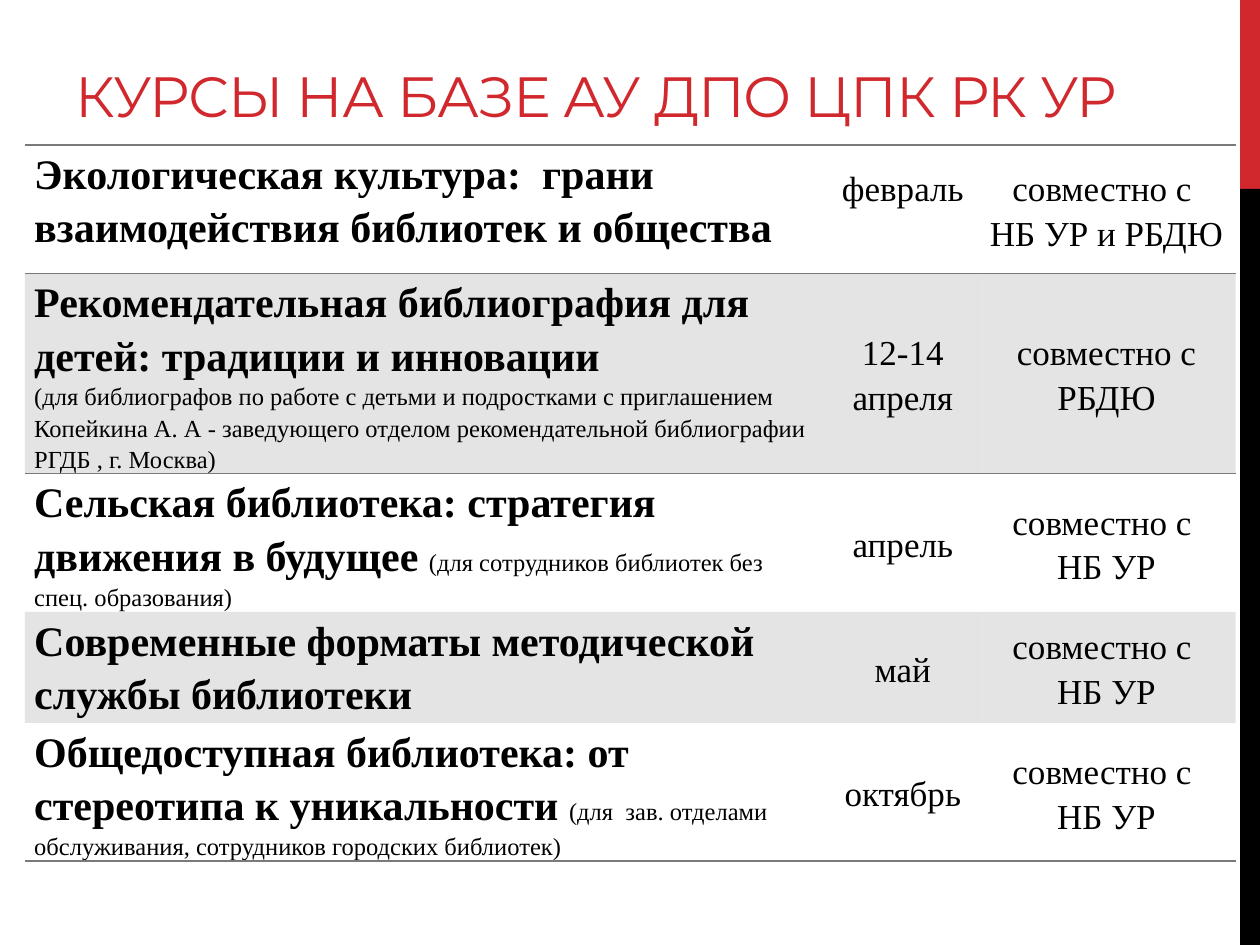
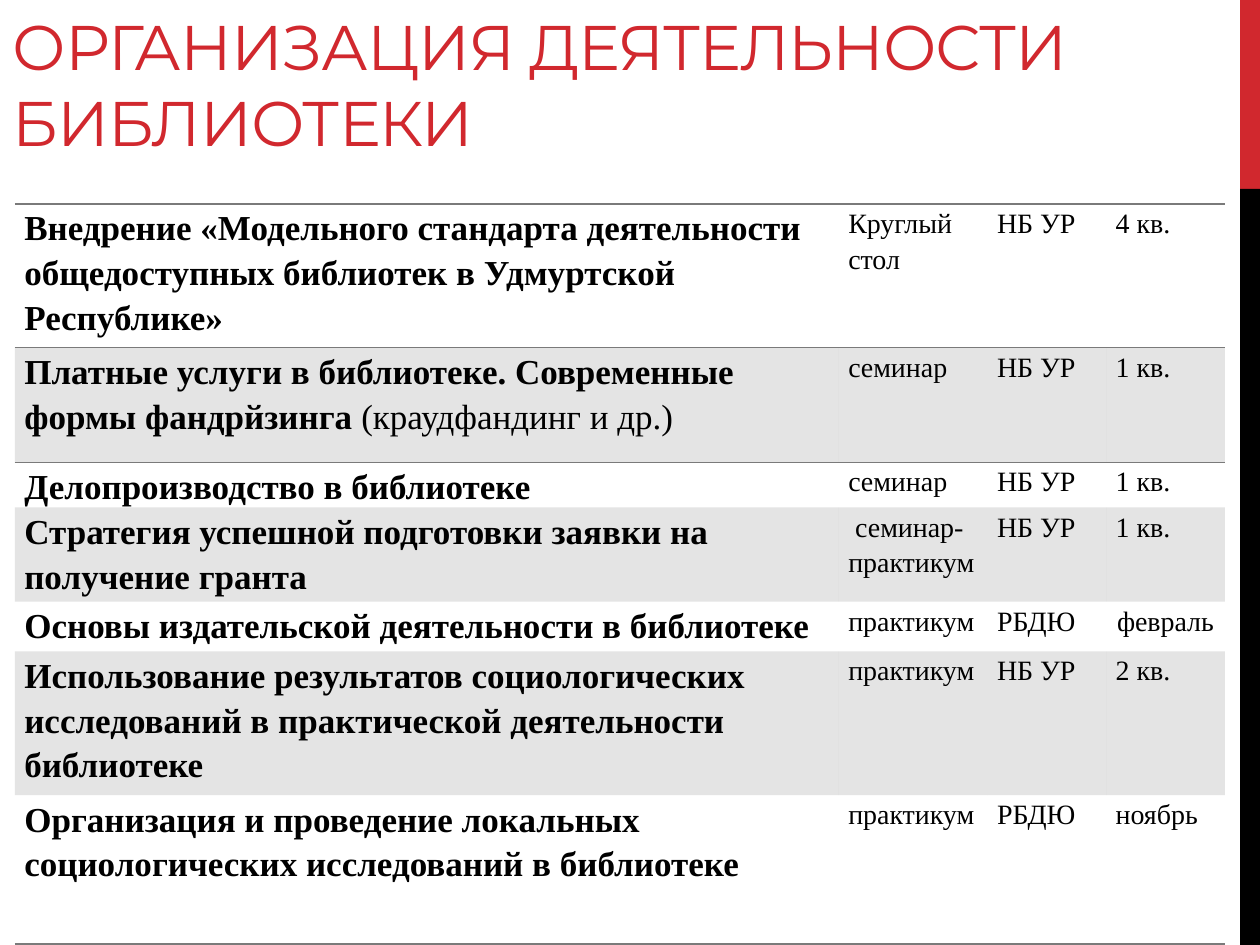
from lxml import etree
from pptx import Presentation
from pptx.dml.color import RGBColor
from pptx.enum.shapes import MSO_SHAPE as Shape
from pptx.enum.text import MSO_ANCHOR as Anchor, MSO_AUTO_SIZE as AutoSize, PP_ALIGN as Align
from pptx.oxml.ns import qn
from pptx.util import Cm, Pt

RED = RGBColor(0xD1, 0x28, 0x2E)
BLACK = RGBColor(0x00, 0x00, 0x00)
GRAY = RGBColor(0x7A, 0x7A, 0x7A)
TITLE_FONT = "Montserrat"
BODY_FONT = "Times New Roman"
NO_TABLE_STYLE = "{2D5ABB26-0587-4C30-8999-92F81FD0307C}"
WIDTH, HEIGHT = 25.4, 19.05
BAND_WIDTH, RED_HEIGHT = 0.4, 3.81

COURSES = [
    ("Экологическая культура:  грани взаимодействия библиотек и общества",
     "февраль", "совместно с \nНБ УР и РБДЮ"),
    ("Рекомендательная библиография для детей: традиции и инновации\n"
     "|(для библиографов по работе с детьми и подростками с приглашением "
     "Копейкина А. А - заведующего отделом рекомендательной библиографии РГДБ , г. Москва)",
     "12-14 апреля", "совместно с РБДЮ"),
    ("Сельская библиотека: стратегия движения в будущее "
     "|(для сотрудников библиотек без спец. образования)",
     "апрель", "совместно с \nНБ УР"),
    ("Современные форматы методической службы библиотеки",
     "май", "совместно с \nНБ УР"),
    ("Общедоступная библиотека: от стереотипа к уникальности "
     "|(для  зав. отделами обслуживания, сотрудников городских библиотек)",
     "октябрь", "совместно с \nНБ УР"),
]
EVENTS = [
    ("Внедрение «Модельного стандарта деятельности общедоступных библиотек в Удмуртской Республике»",
     "Круглый стол", "НБ УР", "4 кв."),
    ("Платные услуги в библиотеке. Современные формы фандрйзинга| (краудфандинг и др.)",
     "семинар", "НБ УР", "1 кв."),
    ("Делопроизводство в библиотеке", "семинар", "НБ УР", "1 кв."),
    ("Стратегия успешной подготовки заявки на получение гранта",
     " семинар-практикум", "НБ УР", "1 кв."),
    ("Основы издательской деятельности в библиотеке", "практикум", "РБДЮ", "февраль"),
    ("Использование результатов социологических исследований в практической деятельности библиотеке",
     "практикум", "НБ УР", "2 кв."),
    ("Организация и проведение локальных социологических исследований в библиотеке",
     "практикум", "РБДЮ", "ноябрь"),
]


def write(para, text, *, size, font=BODY_FONT, color=BLACK, bold=False, spacing=None):
    span = para.add_run()
    span.text = text
    span.font.name = font
    span.font.size = Pt(size)
    span.font.bold = bold
    span.font.color.rgb = color
    if spacing is not None:
        span.font._element.set("spc", str(round(spacing * 100)))


def move(box, left, top, width, height):
    box.left, box.top, box.width, box.height = map(Cm, (left, top, width, height))


def add_band(slide, layout, top, height, color):
    band = slide.shapes.add_shape(
        Shape.RECTANGLE, Cm(WIDTH - BAND_WIDTH), Cm(top), Cm(BAND_WIDTH), Cm(height))
    band.shadow.inherit = False
    band.fill.solid()
    band.fill.fore_color.rgb = color
    band.line.fill.background()
    layout.shapes.element.append(band.element)


def add_titled_page(deck, layout, title, place, size):
    page = deck.slides.add_slide(layout)
    box = page.shapes.title
    move(box, *place)
    frame = box.text_frame
    frame.word_wrap = True
    frame.auto_size = AutoSize.NONE
    frame.vertical_anchor = Anchor.BOTTOM
    para = frame.paragraphs[0]
    para.alignment = Align.LEFT
    write(para, title, size=size, font=TITLE_FONT, color=RED, spacing=-0.6)
    return page


def shade(cell):
    cell.fill.solid()
    cell.fill.fore_color.rgb = GRAY
    color = cell._tc.tcPr.find(".//" + qn("a:srgbClr"))
    etree.SubElement(color, qn("a:alpha"), val="20000")


def draw_borders(cell, sides):
    for position, side in enumerate(sides):
        line = etree.Element(qn("a:ln" + side), w=str(Pt(1)))
        fill = etree.SubElement(line, qn("a:solidFill"))
        etree.SubElement(fill, qn("a:srgbClr"), val=str(GRAY))
        cell._tc.get_or_add_tcPr().insert(position, line)


def fill_cell(cell, text, *, size, note_size, bold, align, anchor):
    cell.margin_left = cell.margin_right = Cm(0.19)
    cell.margin_top = cell.margin_bottom = 0
    cell.vertical_anchor = anchor
    frame = cell.text_frame
    for number, line in enumerate(text.split("\n")):
        para = frame.add_paragraph() if number else frame.paragraphs[0]
        para.alignment = align
        para.line_spacing = 1.15
        heading, _, note = line.partition("|")
        if heading:
            write(para, heading, size=size, bold=bold)
        if note:
            write(para, note, size=note_size)


def add_schedule(page, rows, left, top, widths, heights, *, topic_size, note_size,
                 detail_size, detail_align=Align.LEFT, detail_anchor=Anchor.TOP):
    frame = page.shapes.add_table(
        len(rows), len(widths), Cm(left), Cm(top), Cm(sum(widths)), Cm(sum(heights)))
    table = frame.table
    table.first_row = table.horz_banding = False
    frame._element.find(".//" + qn("a:tableStyleId")).text = NO_TABLE_STYLE
    for column, width in zip(table.columns, widths):
        column.width = Cm(width)
    for index, (row, height) in enumerate(zip(rows, heights)):
        table.rows[index].height = Cm(height)
        for column, text in enumerate(row):
            cell = table.cell(index, column)
            topic = column == 0
            fill_cell(cell, text, size=topic_size if topic else detail_size,
                      note_size=note_size, bold=topic,
                      align=Align.LEFT if topic else detail_align,
                      anchor=Anchor.TOP if topic else detail_anchor)
            if index % 2:
                shade(cell)
            else:
                cell.fill.background()
            if index == 0:
                draw_borders(cell, "TB")
            elif index == 1:
                draw_borders(cell, "T")
            elif index == len(rows) - 1:
                draw_borders(cell, "B")
    return table


def main():
    deck = Presentation()
    deck.slide_width, deck.slide_height = Cm(WIDTH), Cm(HEIGHT)
    layout = deck.slide_layouts[5]

    page = add_titled_page(deck, layout, "КУРСЫ НА БАЗЕ АУ ДПО ЦПК РК УР",
                           (1.27, 0.76, 22.86, 1.96), 32.4)
    add_band(page, layout, 0, RED_HEIGHT, RED)
    add_band(page, layout, RED_HEIGHT, HEIGHT - RED_HEIGHT, BLACK)
    courses = add_schedule(
        page, COURSES, 0.5, 2.92, (16.2, 3, 5.21), (2.59, 3.99, 2.79, 2.24, 2.77),
        topic_size=24, note_size=14, detail_size=20,
        detail_align=Align.CENTER, detail_anchor=Anchor.MIDDLE)
    courses.cell(0, 1).margin_bottom = Cm(0.9)

    page = add_titled_page(deck, layout, "ОРГАНИЗАЦИЯ ДЕЯТЕЛЬНОСТИ БИБЛИОТЕКИ",
                           (0, 0.76, 25.4, 2.57), 36)
    events = add_schedule(
        page, EVENTS, 0.3, 4.11, (16.61, 3, 2.39, 2.39), (2.9, 2.31, 0.91, 1.9, 1, 2.9, 3),
        topic_size=20, note_size=20, detail_size=16)
    events.cell(4, 3).text_frame.paragraphs[0].alignment = Align.CENTER
    events.cell(6, 3).text_frame.paragraphs[0].alignment = Align.JUSTIFY

    deck.save("out.pptx")


if __name__ == "__main__":
    main()
